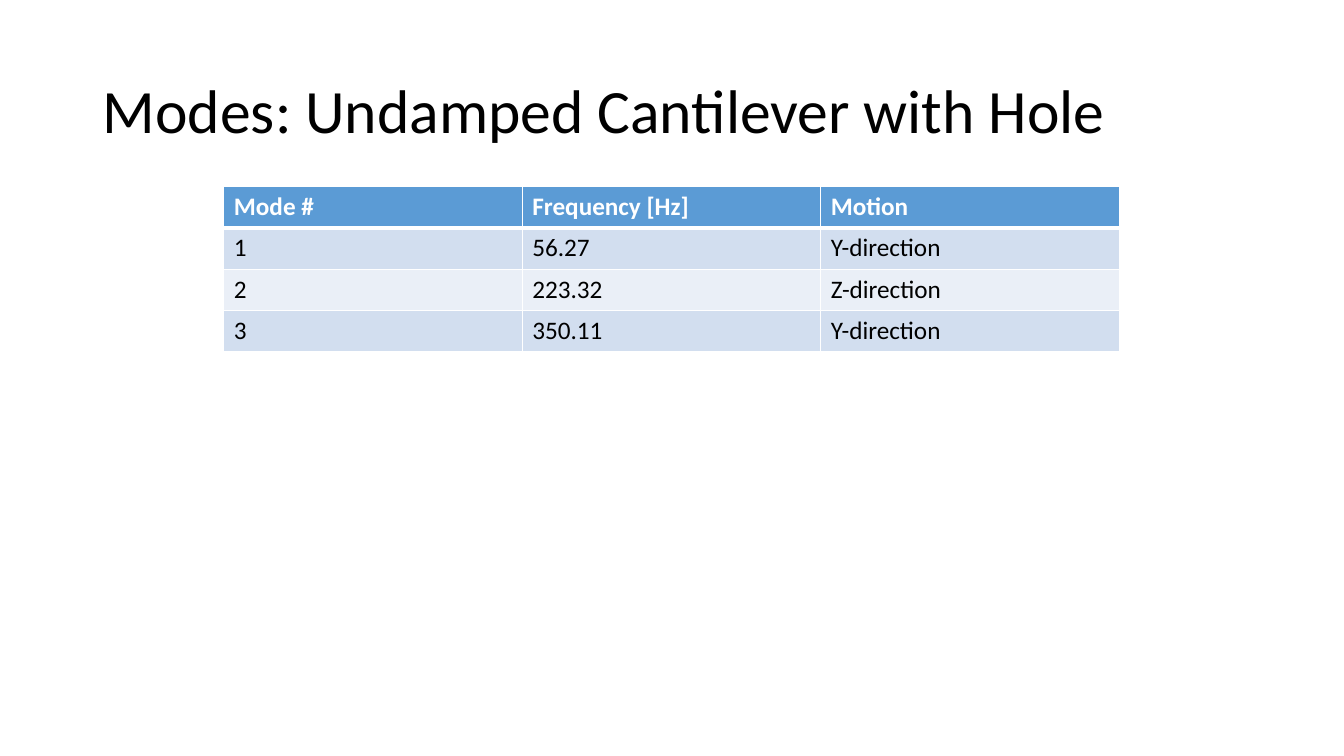
from pptx import Presentation
from pptx.dml.color import RGBColor as RGB
from pptx.enum.text import MSO_ANCHOR as Anchor, PP_ALIGN as Align
from pptx.oxml.ns import qn
from pptx.util import Inches, Pt
from lxml.etree import SubElement as Sub

# Content
TITLE = "Modes: Undamped Cantilever with Hole"
ROWS = [
    ("Mode #", "Frequency [Hz]", "Motion"),
    ("1", "56.27", "Y-direction"),
    ("2", "223.32", "Z-direction"),
    ("3", "350.11", "Y-direction"),
]
COLORS = {"text": "000000", "white": "FFFFFF", "head": "5B9BD5",
          "odd": "D2DEEF", "even": "EAEFF7"}

# Layout in inches
TITLE_BOX = (0.92, 0.4, 11.5, 1.45)
LEFT, TOP, COL_W, ROW_H = 2.22, 1.85, 2.963, 0.405
COL_W, ROW_H = round(COL_W, 2), round(ROW_H, 2)


def style(font, color, **values):
    for name, value in {"name": "Calibri", **values}.items():
        setattr(font, name, value)
    font.color.rgb = RGB.from_string(COLORS[color])


def border(cell, widths):
    props = cell._tc.get_or_add_tcPr()
    for side, width in widths.items():
        line = Sub(props, qn(f"a:ln{side}"), w=str(Pt(width)))
        fill = Sub(line, qn("a:solidFill"))
        Sub(fill, qn("a:srgbClr"), val=COLORS["white"])


deck = Presentation()
deck.slide_width, deck.slide_height = Inches(13.33), Inches(7.5)
slide = deck.slides.add_slide(deck.slide_layouts[5])

# Title
title = slide.shapes.title
for name, value in zip(("left", "top", "width", "height"), TITLE_BOX):
    setattr(title, name, Inches(value))
frame = title.text_frame
frame.text = TITLE
frame.word_wrap = True
frame.vertical_anchor = Anchor.MIDDLE
para = frame.paragraphs[0]
para.alignment, para.line_spacing = Align.LEFT, 0.9
style(para.runs[0].font, "text", size=Pt(44))

# Table
table = slide.shapes.add_table(
    len(ROWS), len(ROWS[0]), Inches(LEFT), Inches(TOP),
    Inches(COL_W * len(ROWS[0])), Inches(ROW_H * len(ROWS))).table
for col in table.columns:
    col.width = Inches(COL_W)
for r, row in enumerate(ROWS):
    table.rows[r].height = Inches(ROW_H)
    head = r == 0
    fill = "head" if head else "odd" if r % 2 else "even"
    for c, text in enumerate(row):
        cell = table.cell(r, c)
        cell.text = text
        style(cell.text_frame.paragraphs[0].runs[0].font,
              "white" if head else "text", size=Pt(18), bold=head)
        border(cell, {"L": 1, "R": 1, "T": 3 if r == 1 else 1,
                      "B": 3 if head else 1})
        cell.fill.solid()
        cell.fill.fore_color.rgb = RGB.from_string(COLORS[fill])

deck.save("out.pptx")
